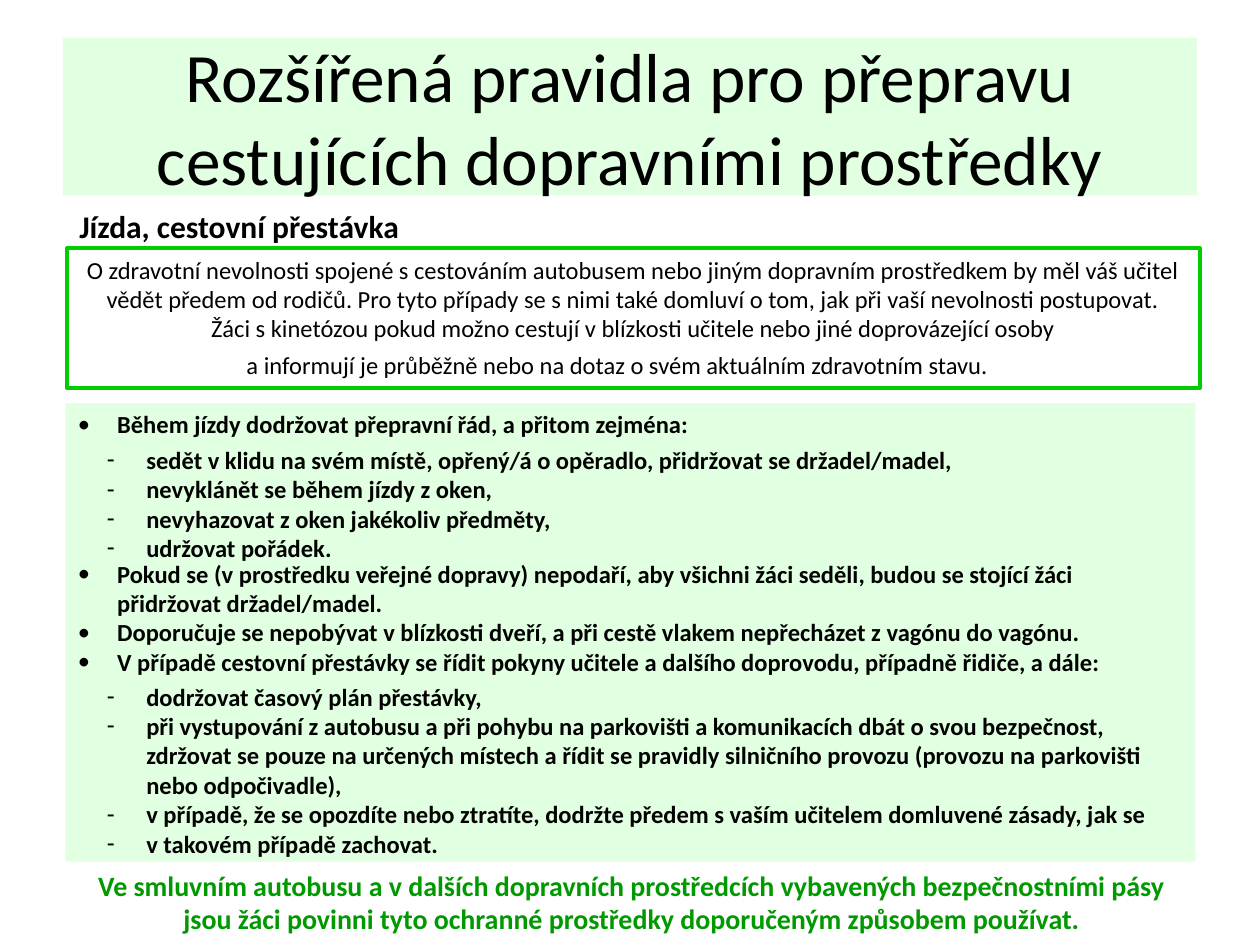
import pptx
import pptx.util
import pptx.dml.color
import pptx.enum.shapes
import pptx.enum.text
import pptx.oxml
import pptx.oxml.ns
from dataclasses import dataclass

Pt = pptx.util.Pt
RGB = pptx.dml.color.RGBColor.from_string
ALIGN = pptx.enum.text.PP_ALIGN
ANCHOR = pptx.enum.text.MSO_ANCHOR


@dataclass(frozen=True)
class Theme:
    font: str = "Calibri"
    text: str = "000000"
    panel: str = "E1FFE1"
    paper: str = "FFFFFF"
    frame: str = "00CC00"
    accent: str = "009900"
    title: float = 39.6
    heading: float = 18
    footer: float = 16
    body: float = 14
    indent: float = 22.5
    line_height: float = 17.1


THEME = Theme()

TITLE = "Rozšířená pravidla pro přepravu cestujících dopravními prostředky"
HEADING = "Jízda, cestovní přestávka"
SICKNESS = [
    "O zdravotní nevolnosti spojené s cestováním autobusem nebo jiným dopravním prostředkem by měl váš učitel vědět předem od rodičů. Pro tyto případy se s nimi také domluví o tom, jak při vaší nevolnosti postupovat.",
    "Žáci s kinetózou pokud možno cestují v blízkosti učitele nebo jiné doprovázející osoby",
    "a informují je průběžně nebo na dotaz o svém aktuálním zdravotním stavu.",
]
RULES = [
    "Během jízdy dodržovat přepravní řád, a přitom zejména:",
    "Pokud se (v prostředku veřejné dopravy) nepodaří, aby všichni žáci seděli, budou se stojící žáci přidržovat držadel/madel.",
    "Doporučuje se nepobývat v blízkosti dveří, a při cestě vlakem nepřecházet z vagónu do vagónu.",
    "V případě cestovní přestávky se řídit pokyny učitele a dalšího doprovodu, případně řidiče, a dále:",
]
RIDE = [
    "sedět v klidu na svém místě, opřený/á o opěradlo, přidržovat se držadel/madel,",
    "nevyklánět se během jízdy z oken,",
    "nevyhazovat z oken jakékoliv předměty,",
    "udržovat pořádek.",
]
BREAK = [
    "dodržovat časový plán přestávky,",
    "při vystupování z autobusu a při pohybu na parkovišti a komunikacích dbát o svou bezpečnost, zdržovat se pouze na určených místech a řídit se pravidly silničního provozu (provozu na parkovišti nebo odpočivadle),",
    "v případě, že se opozdíte nebo ztratíte, dodržte předem s vaším učitelem domluvené zásady, jak se",
    "v takovém případě zachovat.",
]
FOOTER = "Ve smluvním autobusu a v dalších dopravních prostředcích vybavených bezpečnostními pásy jsou žáci povinni tyto ochranné prostředky doporučeným způsobem používat."


def add_bullet(p, char):
    pPr = p._p.get_or_add_pPr()
    pPr.set("marL", str(Pt(THEME.indent)))
    pPr.set("indent", str(-Pt(THEME.indent)))
    for tag, key, value in (("a:buFont", "typeface", THEME.font), ("a:buChar", "char", char)):
        el = pptx.oxml.ns.qn(tag)
        pPr.append(pPr.makeelement(el, {key: value}))


def write(sp, lines, size, bold=False, color=THEME.text, align=ALIGN.LEFT,
          bullet=None, anchor=ANCHOR.TOP):
    tf = sp.text_frame
    tf.word_wrap = True
    tf.auto_size = pptx.enum.text.MSO_AUTO_SIZE.NONE
    tf.vertical_anchor = anchor
    tf.text = "\n".join(lines)
    for p in tf.paragraphs:
        p.alignment = align
        p.space_before = Pt(0)
        if bullet:
            add_bullet(p, bullet)
        for r in p.runs:
            r.font.name = THEME.font
            r.font.size = Pt(size)
            r.font.bold = bold
            r.font.color.rgb = RGB(color)
    return tf


def add_text(s, box, lines, size, **style):
    sp = s.shapes.add_textbox(*map(Pt, box))
    return write(sp, lines, size, **style)


def add_panel(s, box, fill, line=None):
    sp = s.shapes.add_shape(pptx.enum.shapes.MSO_SHAPE.RECTANGLE, *map(Pt, box))
    sp.shadow.inherit = False
    sp.fill.solid()
    sp.fill.fore_color.rgb = RGB(fill)
    if line:
        sp.line.color.rgb = RGB(line)
        sp.line.width = Pt(2.25)
    else:
        sp.line.fill.background()
    return sp


def title_band(s, box):
    sp = s.shapes.title
    sp.left, sp.top, sp.width, sp.height = map(Pt, box)
    sp.fill.solid()
    sp.fill.fore_color.rgb = RGB(THEME.panel)
    write(sp, [TITLE], THEME.title, align=ALIGN.CENTER, anchor=ANCHOR.MIDDLE)


def sickness_note(s, box):
    x, y, w, h = box
    add_text(s, (x, y, w, 30), [HEADING], THEME.heading, bold=True)
    sp = add_panel(s, (x, y + 27.4, w, h - 27.4), THEME.paper, THEME.frame)
    tf = write(sp, SICKNESS, THEME.body, align=ALIGN.CENTER)
    last = tf.paragraphs[-1]
    last.space_before = Pt(4)
    last._p.get_or_add_pPr().set("marR", str(Pt(18)))


def rules_panel(s, box):
    x, y, w, h = box
    sp = add_panel(s, box, THEME.panel)
    tf = write(sp, RULES, THEME.body, bold=True, bullet="•")
    tf.paragraphs[1].space_before = Pt(len(RIDE) * THEME.line_height)
    for top, height, lines in ((20.2, 75, RIDE), (155.5, 110, BREAK)):
        add_text(s, (x + 16.6, y + top, w - 20, height), lines, THEME.body,
                 bold=True, bullet="‐")


def footer_note(s, box):
    add_text(s, box, [FOOTER], THEME.footer, bold=True, color=THEME.accent,
             align=ALIGN.CENTER)


def main():
    prs = pptx.Presentation()
    prs.slide_width, prs.slide_height = Pt(720), Pt(540)
    s = prs.slides.add_slide(prs.slide_layouts[5])
    title_band(s, (36, 21.6, 648, 90))
    sickness_note(s, (38.2, 114.5, 647.3, 107.3))
    rules_panel(s, (37.4, 230.4, 645.8, 262))
    footer_note(s, (36, 492.5, 650, 46))
    prs.save("out.pptx")


if __name__ == "__main__":
    main()
